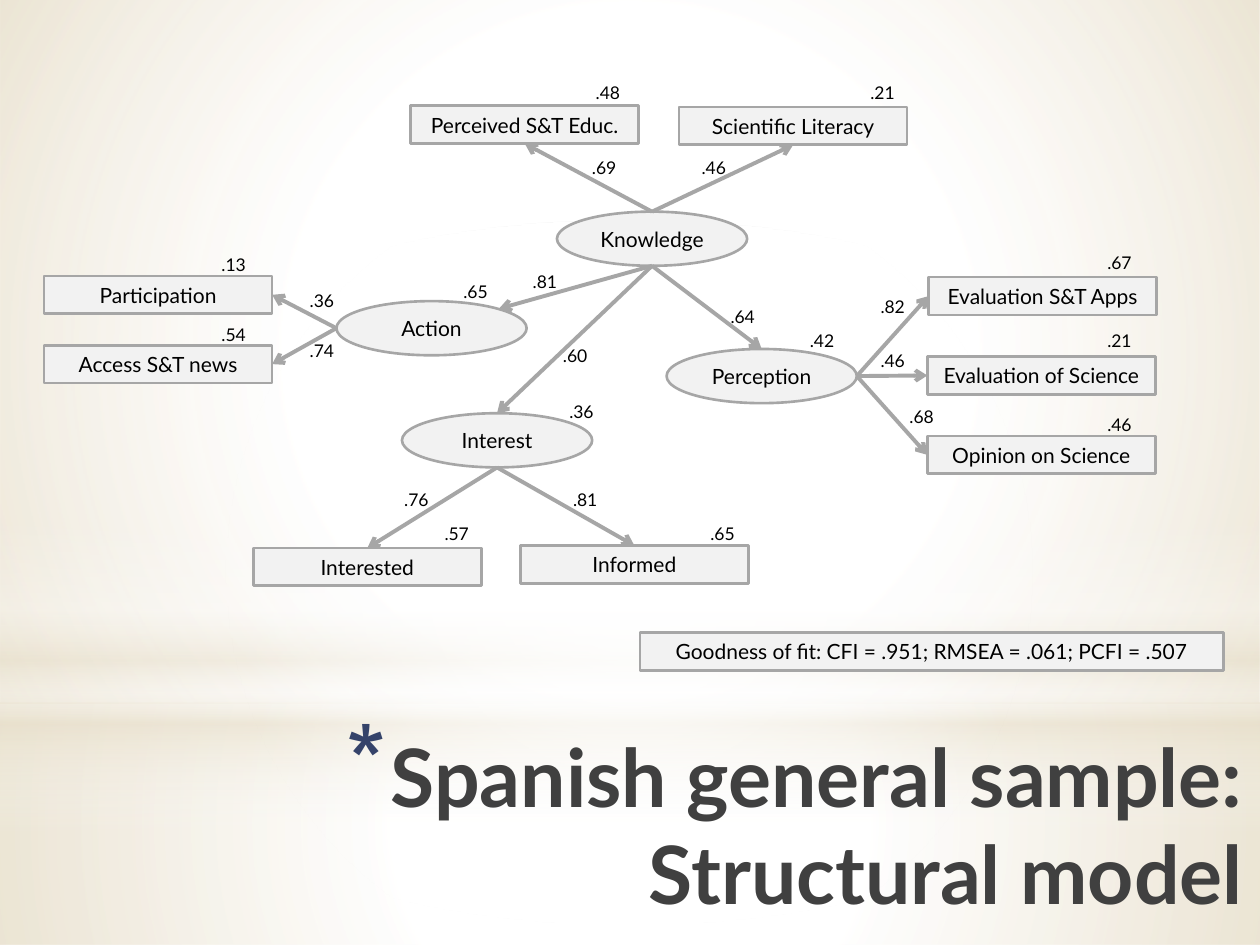
from lxml.etree import SubElement
from pptx import Presentation
from pptx.dml.color import RGBColor
from pptx.enum.shapes import MSO_CONNECTOR, MSO_SHAPE
from pptx.enum.text import MSO_ANCHOR, MSO_AUTO_SIZE, PP_ALIGN
from pptx.oxml.ns import qn
from pptx.util import Inches, Pt

# The slide is a grid of 100 columns by 75 rows
COLUMNS, ROWS = 100, 75
CELL = Inches(0.1)

WHITE = RGBColor(0xFF, 0xFF, 0xFF)
CREAM = RGBColor(0xE7, 0xDE, 0xC9)
PALE = RGBColor(0xF2, 0xF2, 0xF2)
GREY = RGBColor(0xA6, 0xA6, 0xA6)
BLACK = RGBColor(0, 0, 0)
CHARCOAL = RGBColor(0x40, 0x40, 0x40)
NAVY = RGBColor(0x35, 0x43, 0x6A)

FONT = "Lato"
BOX_SIZE = (18.1, 3)
OVAL_SIZE = (15.1, 4.3)
LABEL_SIZE = (4, 2.7)
TOP, LEFT, BOTTOM, RIGHT = range(4)

# Backdrop: shape, place, angle (None is radial), stops of position, colour, opacity
BACKDROP = [
    (MSO_SHAPE.RECTANGLE, (0, 55.8, 100, 19.2), None,
     [(0, WHITE, 91), (37, WHITE, 76), (100, CREAM, 79)]),
    (MSO_SHAPE.RECTANGLE, (0, 0, 100, 55.8), None,
     [(0, WHITE, 89), (48, WHITE, 62), (100, CREAM, 79)]),
    (MSO_SHAPE.RECTANGLE, (0, 41.2, 100, 25), 90,
     [(0, WHITE, 0), (29, WHITE, 30), (45, CREAM, 40),
      (55, WHITE, 26), (65, CREAM, 60), (100, WHITE, 0)]),
    (MSO_SHAPE.OVAL, (0, 17.5, 100, 55.8), None,
     [(0, WHITE, 100), (56, WHITE, 0)]),
]

# Latent factors: left and top
FACTORS = {
    "Action": (26.7, 23.9),
    "Knowledge": (44.2, 16.8),
    "Interest": (31.9, 32.8),
    "Perception": (52.9, 27.7),
}

# Indicators: left, top, factor, side of the factor, side of the box
INDICATORS = {
    "Perceived S&T Educ.": (32.6, 8.4, "Knowledge", TOP, BOTTOM),
    "Scientific Literacy": (53.9, 8.5, "Knowledge", TOP, BOTTOM),
    "Participation": (3.5, 21.9, "Action", LEFT, RIGHT),
    "Access S&T news": (3.5, 27.4, "Action", LEFT, RIGHT),
    "Interested": (20.1, 43.5, "Interest", BOTTOM, TOP),
    "Informed": (41.3, 43.3, "Interest", BOTTOM, TOP),
    "Evaluation S&T Apps": (73.7, 22, "Perception", RIGHT, LEFT),
    "Evaluation of Science": (73.6, 28.3, "Perception", RIGHT, LEFT),
    "Opinion on Science": (73.6, 34.6, "Perception", RIGHT, LEFT),
}

# Explained variances and path weights: text, left, top
VARIANCES = [
    (".48", 46.3, 6), (".21", 68.1, 6), (".13", 16.6, 19.7), (".54", 16.6, 25.2),
    (".67", 86.9, 19.5), (".21", 86.9, 25.7), (".46", 86.9, 32.4),
    (".57", 34.3, 41), (".65", 55.4, 41),
    (".65", 35.8, 21.8), (".42", 63.3, 25.7), (".36", 44.2, 31.3),
]
WEIGHTS = [
    (".69", 46, 12), (".46", 54.7, 12), (".36", 23.6, 22.5), (".74", 23.6, 26.5),
    (".82", 68.9, 23), (".46", 68.9, 27.3), (".68", 71.2, 31.7),
    (".76", 31.1, 38.3), (".81", 44.5, 38.3),
    (".81", 41.3, 21), (".60", 43.7, 26.9), (".64", 57, 23.8),
]


def cells(*values):
    return [round(value * CELL) for value in values]


def write(shape, text, size=12, color=BLACK, bold=False, align=PP_ALIGN.LEFT,
          anchor=MSO_ANCHOR.TOP, wrap=True, fit=True):
    frame = shape.text_frame
    frame.word_wrap = wrap
    frame.vertical_anchor = anchor
    frame.auto_size = MSO_AUTO_SIZE.SHAPE_TO_FIT_TEXT if fit else MSO_AUTO_SIZE.NONE
    para = frame.paragraphs[0]
    para.alignment = align
    span = para.add_run()
    span.text = text
    span.font.name = FONT
    span.font.size = Pt(size)
    span.font.bold = bold
    span.font.color.rgb = color
    return para


def add_glow(page, kind, place, angle, stops):
    shape = page.shapes.add_shape(kind, *cells(*place))
    shape.shadow.inherit = False
    shape.line.fill.background()
    shape.fill.gradient()
    gradient = shape._element.spPr.find(qn("a:gradFill"))
    for child in list(gradient):
        gradient.remove(child)
    stop_list = SubElement(gradient, qn("a:gsLst"))
    for position, color, opacity in stops:
        stop = SubElement(stop_list, qn("a:gs"), pos=str(position * 1000))
        tone = SubElement(stop, qn("a:srgbClr"), val=str(color))
        SubElement(tone, qn("a:alpha"), val=str(opacity * 1000))
    if angle is None:
        radial = SubElement(gradient, qn("a:path"), {"path": "circle"})
        SubElement(radial, qn("a:fillToRect"), l="50000", t="50000", r="50000", b="50000")
    else:
        SubElement(gradient, qn("a:lin"), ang=str(angle * 60000), scaled="0")


def add_node(page, text, left, top, size=BOX_SIZE, kind=MSO_SHAPE.RECTANGLE):
    shape = page.shapes.add_shape(kind, *cells(left, top, *size))
    shape.shadow.inherit = False
    shape.fill.solid()
    shape.fill.fore_color.rgb = PALE
    shape.line.color.rgb = GREY
    shape.line.width = Pt(1.5)
    write(shape, text, align=PP_ALIGN.CENTER, anchor=MSO_ANCHOR.MIDDLE)
    return shape


def add_label(page, text, left, top):
    box = page.shapes.add_textbox(*cells(left, top, *LABEL_SIZE))
    write(box, text, size=10, wrap=False)


def side_point(shape, side):
    across, down = {TOP: (0.5, 0), LEFT: (0, 0.5),
                    BOTTOM: (0.5, 1), RIGHT: (1, 0.5)}[side]
    return (round(shape.left + across * shape.width),
            round(shape.top + down * shape.height))


def add_arrow(page, start, end):
    arrow = page.shapes.add_connector(MSO_CONNECTOR.STRAIGHT, *start, *end)
    arrow.line.color.rgb = GREY
    arrow.line.width = Pt(2.25)
    SubElement(arrow.line._get_or_add_ln(), qn("a:tailEnd"), type="arrow")
    SubElement(arrow._element.spPr, qn("a:effectLst"))
    return arrow


def add_title(page, text):
    box = page.shapes.add_textbox(*cells(6, 57.2, 93.6, 17.3))
    para = write(box, text, size=46, color=CHARCOAL, bold=True,
                 align=PP_ALIGN.RIGHT, fit=False)
    # Hanging asterisk bullet
    settings = para._p.get_or_add_pPr()
    settings.set("marL", str(Inches(0.35)))
    settings.set("indent", str(-Inches(0.35)))
    bullet_color = SubElement(settings, qn("a:buClr"))
    SubElement(bullet_color, qn("a:srgbClr"), val=str(NAVY))
    SubElement(settings, qn("a:buSzPct"), val="128000")
    SubElement(settings, qn("a:buChar"), char="*")


def main():
    deck = Presentation()
    deck.slide_width, deck.slide_height = cells(COLUMNS, ROWS)
    page = deck.slides.add_slide(deck.slide_layouts[6])

    # Backdrop and title
    for glow in BACKDROP:
        add_glow(page, *glow)
    add_title(page, "Spanish general sample: Structural model")

    # Factors, and indicators with their arrows
    factors = {name: add_node(page, name, *place, size=OVAL_SIZE, kind=MSO_SHAPE.OVAL)
               for name, place in FACTORS.items()}
    for name, (left, top, factor, factor_side, box_side) in INDICATORS.items():
        box = add_node(page, name, left, top)
        arrow = add_arrow(page, side_point(factors[factor], factor_side),
                          side_point(box, box_side))
        arrow.end_connect(box, box_side)

    # Paths from knowledge to the other factors
    source = side_point(factors["Knowledge"], BOTTOM)
    for name in ("Interest", "Perception"):
        add_arrow(page, source, side_point(factors[name], TOP))
    add_arrow(page, source, cells(39.6, 24.5))

    # Coefficients and goodness of fit
    for label in VARIANCES + WEIGHTS:
        add_label(page, *label)
    add_node(page, "Goodness of fit: CFI = .951; RMSEA = .061; PCFI = .507",
             50.8, 50.2, size=(46.3, 3))

    deck.save("out.pptx")


if __name__ == "__main__":
    main()
